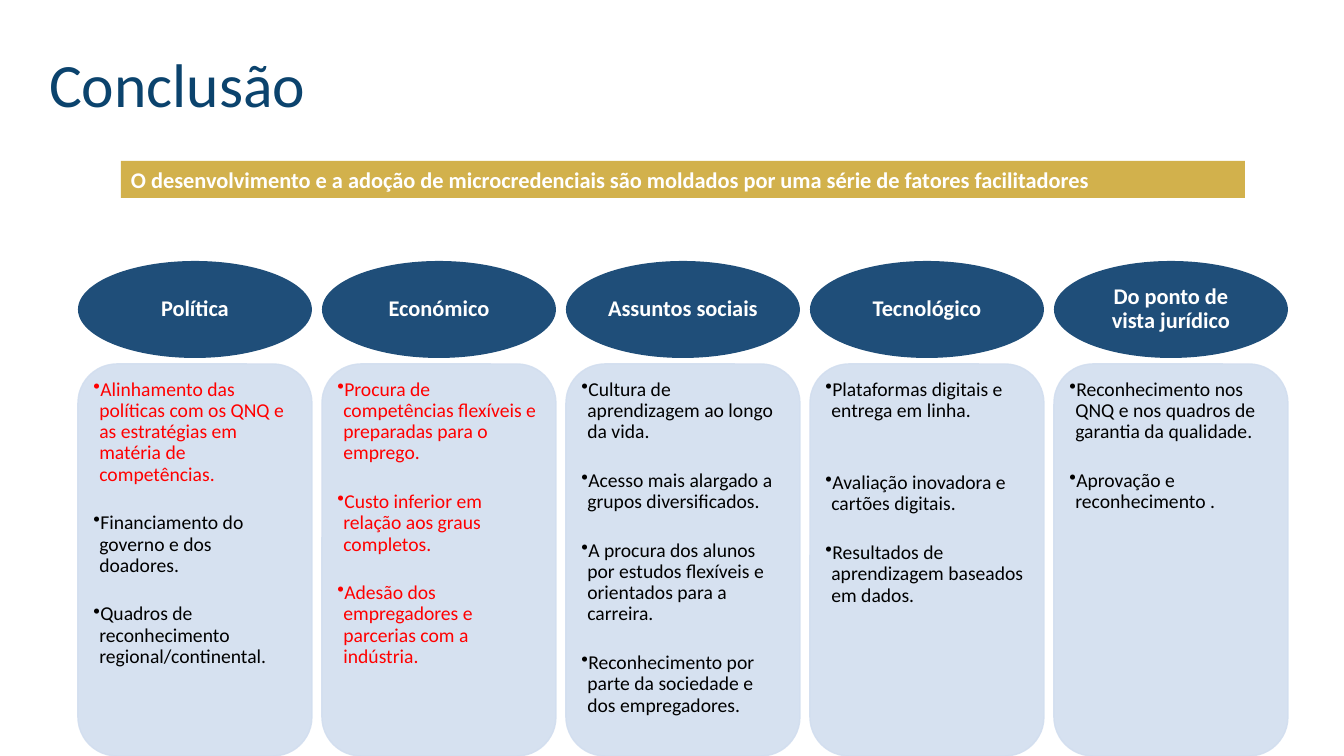
"""Build the conclusion slide on the enabling factors of micro-credentials."""
from lxml.etree import SubElement
from pptx import Presentation
from pptx.dml.color import RGBColor
from pptx.enum.shapes import MSO_SHAPE
from pptx.enum.text import MSO_ANCHOR, PP_ALIGN
from pptx.oxml.ns import qn
from pptx.util import Emu, Pt

NAVY = RGBColor(0x0B, 0x43, 0x6D)
BLUE = RGBColor(0x1F, 0x4E, 0x79)
PALE = RGBColor(0xD2, 0xDE, 0xEF)
GOLD = RGBColor(0xBF, 0x90, 0x00)
RED = RGBColor(0xFF, 0x00, 0x00)
BLACK = RGBColor(0x00, 0x00, 0x00)
WHITE = RGBColor(0xFF, 0xFF, 0xFF)

TITLE = "Conclusão"
BANNER = ("O desenvolvimento e a adoção de microcredenciais são moldados "
          "por uma série de fatores facilitadores")
FACTORS = [
    ("Política", [
        ("Alinhamento das políticas com os QNQ e as estratégias em matéria de competências.", RED, 0),
        ("Financiamento do governo e dos doadores.", BLACK, 1),
        ("Quadros de reconhecimento regional/continental.", BLACK, 1)]),
    ("Económico", [
        ("Procura de competências flexíveis e preparadas para o emprego.", RED, 0),
        ("Custo inferior em relação aos graus completos.", RED, 1),
        ("Adesão dos empregadores e parcerias com a indústria.", RED, 1)]),
    ("Assuntos sociais", [
        ("Cultura de aprendizagem ao longo da vida.", BLACK, 0),
        ("Acesso mais alargado a grupos diversificados.", BLACK, 1),
        ("A procura dos alunos por estudos flexíveis e orientados para a carreira.", BLACK, 1),
        ("Reconhecimento por parte da sociedade e dos empregadores.", BLACK, 1)]),
    ("Tecnológico", [
        ("Plataformas digitais e entrega em linha.", BLACK, 0),
        ("Avaliação inovadora e cartões digitais.", BLACK, 2),
        ("Resultados de aprendizagem baseados em dados.", BLACK, 1)]),
    ("Do ponto de vista jurídico", [
        ("Reconhecimento nos QNQ e nos quadros de garantia da qualidade.", BLACK, 0),
        ("Aprovação e reconhecimento .", BLACK, 1)]),
]

EMU_PER_PX = 914400 / 100.8
SLIDE_W, SLIDE_H = 1344, 756
COL_X, COL_STEP, COL_W = 78, 244, 234
HEAD_Y, HEAD_H = 261, 97
BODY_Y, BODY_H = 364, 392
BULLET_INDENT = 6
GAP_FIRST, GAP_MORE = 19.7, 16.8


def px(n):
    return Emu(round(n * EMU_PER_PX))


def set_alpha(fill_parent, percent):
    color = fill_parent.find(qn("a:solidFill"))[0]
    SubElement(color, qn("a:alpha")).set("val", str(percent * 1000))


def add_panel(slide, kind, box, color, alpha=100, outlined=False):
    sp = slide.shapes.add_shape(kind, *map(px, box))
    sp.shadow.inherit = False
    sp.fill.solid()
    sp.fill.fore_color.rgb = color
    set_alpha(sp._element.spPr, alpha)
    if outlined:
        sp.line.color.rgb = color
        sp.line.width = Pt(1)
        set_alpha(sp.line._get_or_add_ln(), alpha)
    else:
        sp.line.fill.background()
    return sp


def add_text(sp, text, *, size, color, bold=False, align=PP_ALIGN.LEFT,
             anchor=MSO_ANCHOR.MIDDLE, insets=(10, 5, 10, 5),
             spacing=0.9, before=0, bullet=False):
    tf = sp.text_frame
    tf.word_wrap = True
    tf.vertical_anchor = anchor
    tf.margin_left, tf.margin_top, tf.margin_right, tf.margin_bottom = map(px, insets)
    p = tf.add_paragraph() if tf.text else tf.paragraphs[0]
    p.alignment = align
    p.line_spacing = spacing
    if before:
        p.space_before = Pt(before)
    if bullet:
        pPr = p._p.get_or_add_pPr()
        pPr.set("marL", str(px(BULLET_INDENT)))
        pPr.set("indent", str(-px(BULLET_INDENT)))
        SubElement(pPr, qn("a:buChar")).set("char", "•")
    r = p.add_run()
    r.text = text
    r.font.name = "Calibri"
    r.font.size = Pt(size)
    r.font.bold = bold
    r.font.color.rgb = color


def main():
    prs = Presentation()
    prs.slide_width, prs.slide_height = px(SLIDE_W), px(SLIDE_H)
    s = prs.slides.add_slide(prs.slide_layouts[6])

    title = s.shapes.add_textbox(*map(px, (39, 15, 1159, 146)))
    add_text(title, TITLE, size=44, color=NAVY)

    for i, (name, points) in enumerate(FACTORS):
        x = COL_X + i * COL_STEP
        head = add_panel(s, MSO_SHAPE.OVAL, (x, HEAD_Y, COL_W, HEAD_H), BLUE)
        add_text(head, name, size=16, color=WHITE, bold=True,
                 align=PP_ALIGN.CENTER, insets=(5, 3, 5, 3))
        body = add_panel(s, MSO_SHAPE.ROUNDED_RECTANGLE,
                         (x, BODY_Y, COL_W, BODY_H), PALE, 90, outlined=True)
        for text, color, gaps in points:
            before = GAP_FIRST + (gaps - 1) * GAP_MORE if gaps else 0
            add_text(body, text, size=14, color=color, anchor=MSO_ANCHOR.TOP,
                     insets=(4, 4, 5, 6), before=before, bullet=True)

    banner = add_panel(s, MSO_SHAPE.RECTANGLE, (121, 161, 1124, 37), GOLD, 70)
    add_text(banner, BANNER, size=16, color=WHITE, bold=True, spacing=1.0)
    prs.save("out.pptx")


if __name__ == "__main__":
    main()
